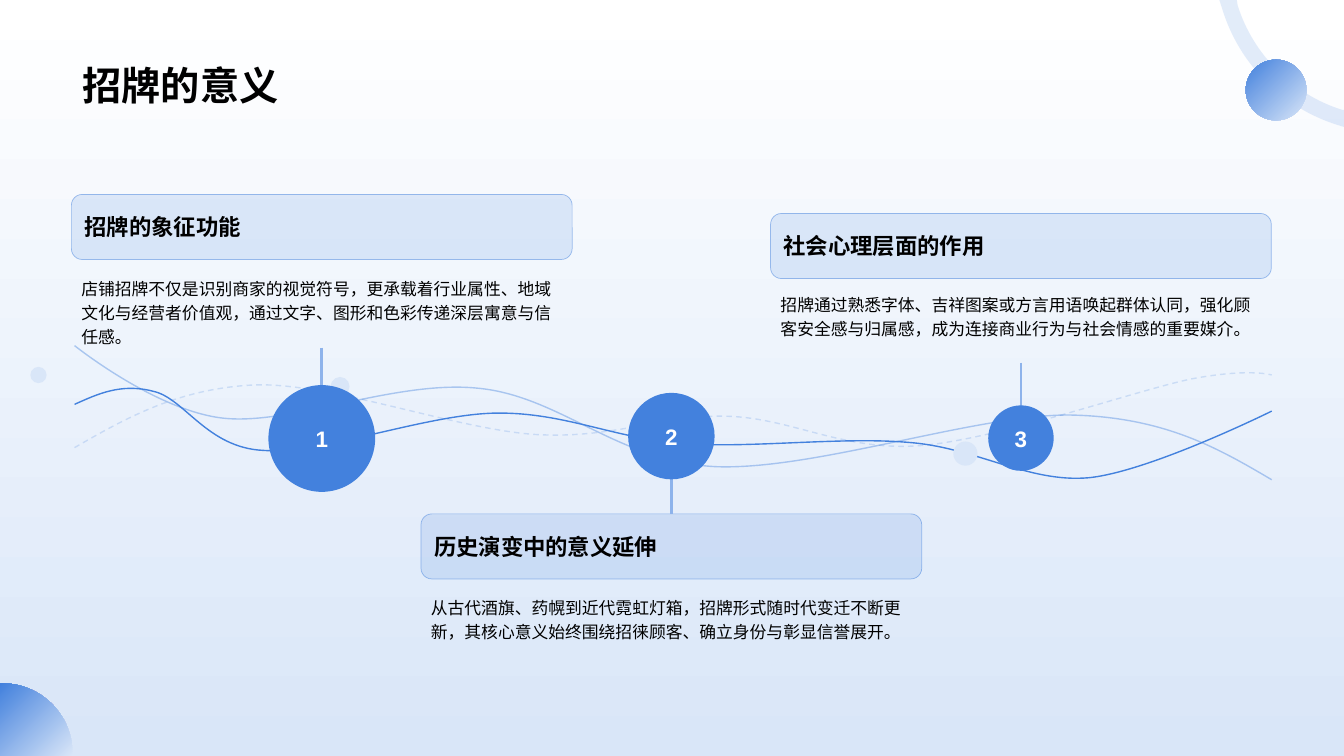
from pptx import Presentation
from pptx.dml.color import RGBColor
from pptx.enum import dml, shapes, text
from pptx.oxml.ns import qn
from pptx.util import Cm, Pt
from lxml import etree
from dataclasses import dataclass

TITLE = "招牌的意义"
CARDS = [
    dict(head="招牌的象征功能", top=4.9, body=6.79, tall=2.34, size=2.69, axis=11.05,
         stem=(8.76, 9.96),
         note="店铺招牌不仅是识别商家的视觉符号，更承载着行业属性、地域文化与经营者价值观，通过文字、图形和色彩传递深层寓意与信任感。"),
    dict(head="历史演变中的意义延伸", top=12.95, body=14.83, tall=2.21, size=2.18, axis=10.99,
         stem=(12.95, 11.48),
         note="从古代酒旗、药幌到近代霓虹灯箱，招牌形式随时代变迁不断更新，其核心意义始终围绕招徕顾客、确立身份与彰显信誉展开。"),
    dict(head="社会心理层面的作用", top=5.38, body=7.19, tall=2.11, size=1.65, axis=11.04,
         stem=(9.14, 10.54),
         note="招牌通过熟悉字体、吉祥图案或方言用语唤起群体认同，强化顾客安全感与归属感，成为连接商业行为与社会情感的重要媒介。"),
]
LEFT, STEP, WIDE, HIGH = 1.8, 8.81, 12.62, 1.64
DOTS = [(8.57, 9.74, 0.48), (24.33, 11.43, 0.61), (0.97, 9.45, 0.41)]
WAVES = [
    (20, True, [(1.88, 11.28), (3.2, 10.52, 4.52, 9.78, 6.45, 9.7),
                (8.38, 9.65, 11.51, 10.82, 13.49, 10.95),
                (15.47, 11.07, 16.71, 10.44, 18.34, 10.49),
                (19.96, 10.54, 21.26, 11.38, 23.19, 11.23),
                (25.15, 11.07, 28.55, 9.86, 30.02, 9.55),
                (31.5, 9.27, 32.05, 9.45, 32.05, 9.45), (32.05, 9.45)]),
    (100, False, [(1.88, 10.19), (2.46, 9.93, 3.05, 9.65, 3.86, 9.86),
                  (4.65, 10.03, 5.21, 11.28, 6.63, 11.35),
                  (8.08, 11.46, 10.72, 10.44, 12.5, 10.41),
                  (14.25, 10.39, 15.47, 11.05, 17.22, 11.18),
                  (18.95, 11.3, 21.21, 11, 22.91, 11.15),
                  (24.61, 11.28, 25.91, 12.17, 27.43, 12.04),
                  (28.96, 11.89, 32.05, 10.36, 32.05, 10.36), (32.05, 10.36)]),
    (40, False, [(32.05, 12.09), (30.71, 11.3, 29.36, 10.52, 27.03, 10.46),
                 (24.69, 10.41, 20.55, 11.86, 18.03, 11.76),
                 (15.54, 11.63, 14.1, 9.96, 12.01, 9.78),
                 (9.96, 9.58, 7.32, 10.72, 5.64, 10.54),
                 (3.94, 10.36, 1.88, 8.71, 1.88, 8.71)]),
]
CORNER = [(0.05, 17.22), (1.04, 17.22, 1.83, 18.01, 1.83, 19),
          (1.83, 19.05), (0, 19.05), (0, 17.22)]
RING = [(30.73, 0), (31.17, 0), (31.19, 0.13),
        (31.57, 1.37, 32.59, 2.39, 33.83, 2.77), (33.87, 2.77),
        (33.87, 3.2), (33.71, 3.15), (32.33, 2.72, 31.24, 1.63, 30.81, 0.25)]


@dataclass
class Theme:
    blue: str = "4381DD"
    pale: str = "D9E6F8"
    stem: str = "8EB3EB"
    white: str = "FFFFFF"
    black: str = "000000"
    font: str = "Arial"
    title: int = 28
    head: int = 16
    body: int = 12


theme = Theme()


def fade(parent, alpha):
    """Set the opacity of the solid colour inside an XML element."""
    color = parent.find(qn("a:solidFill"))[0]
    etree.SubElement(color, qn("a:alpha"), val=str(alpha * 1000))


def blend(fill, start, end, angle):
    """Give a fill a two-colour linear gradient."""
    fill.gradient()
    fill.gradient_angle = angle
    for stop, color in zip(fill.gradient_stops, (start, end)):
        stop.color.rgb = RGBColor.from_string(color)


def paint(shape, color, alpha=100):
    """Fill a shape with one colour."""
    shape.fill.solid()
    shape.fill.fore_color.rgb = RGBColor.from_string(color)
    if alpha < 100:
        fade(shape._element.spPr, alpha)


def stroke(shape, width, color=theme.blue, alpha=100):
    """Give a shape or connector a coloured line."""
    shape.line.width = Pt(width)
    shape.line.color.rgb = RGBColor.from_string(color)
    if alpha < 100:
        fade(shape._element.spPr.find(qn("a:ln")), alpha)


def draw(slide, steps, close):
    """Draw an outline made of points and cubic curves."""
    ends = [(Cm(step[-2]), Cm(step[-1])) for step in steps]
    pen = slide.shapes.build_freeform(*ends[0])
    pen.add_line_segments(ends[1:], close=close)
    shape = pen.convert_to_shape()
    shape.shadow.inherit = False
    for step, leg in zip(steps[1:], list(shape._element.iter(qn("a:lnTo")))):
        if len(step) == 6:
            curve = etree.Element(qn("a:cubicBezTo"))
            for x, y in zip(step[::2], step[1::2]):
                etree.SubElement(curve, qn("a:pt"), x=str(Cm(x) - shape.left),
                                 y=str(Cm(y) - shape.top))
            leg.getparent().replace(leg, curve)
    return shape


def form(slide, kind, x, y, w, h):
    """Add a preset shape without shadow or outline."""
    shape = slide.shapes.add_shape(kind, Cm(x), Cm(y), Cm(w), Cm(h))
    shape.shadow.inherit = False
    shape.line.fill.background()
    return shape


def disc(slide, x, y, size):
    """Add a circle around a centre."""
    return form(slide, shapes.MSO_SHAPE.OVAL, x - size / 2, y - size / 2, size, size)


def write(shape, words, size, color, bold=True, align=text.PP_ALIGN.LEFT,
          anchor=text.MSO_ANCHOR.MIDDLE):
    """Put one formatted paragraph in a shape."""
    frame = shape.text_frame
    frame.word_wrap = True
    frame.auto_size = text.MSO_AUTO_SIZE.NONE
    frame.vertical_anchor = anchor
    para = frame.paragraphs[0]
    para.text = words
    para.alignment = align
    font = para.font
    font.name, font.size, font.bold = theme.font, Pt(size), bold
    font.color.rgb = RGBColor.from_string(color)
    return para


def scene(slide):
    """Draw the background, corner shapes and waves."""
    blend(slide.background.fill, theme.pale, theme.white, 90)
    corner = draw(slide, CORNER, True)
    ring = draw(slide, RING, True)
    paint(ring, theme.blue, 15)
    ball = disc(slide, 32.16, 2.27, 1.53)
    for shape in (corner, ball):
        blend(shape.fill, theme.pale, theme.blue, 135)
    for shape in (corner, ring):
        shape.line.fill.background()
    for alpha, dash, steps in WAVES:
        wave = draw(slide, steps, False)
        wave.fill.background()
        stroke(wave, 1, alpha=alpha)
        if dash:
            wave.line.dash_style = dml.MSO_LINE.DASH
    for x, y, size in DOTS:
        paint(disc(slide, x, y, size), theme.pale)


def card(slide, index, item):
    """Add one heading, its note, its stem and its numbered circle."""
    x = LEFT + index * STEP
    mid = x + WIDE / 2
    box = form(slide, shapes.MSO_SHAPE.ROUNDED_RECTANGLE, x, item["top"], WIDE, HIGH)
    paint(box, theme.blue, 15)
    stroke(box, 0.5, alpha=50)
    write(box, item["head"], theme.head, theme.black)
    note = slide.shapes.add_textbox(Cm(x), Cm(item["body"]), Cm(WIDE), Cm(item["tall"]))
    para = write(note, item["note"], theme.body, theme.black, False,
                 anchor=text.MSO_ANCHOR.TOP)
    para.line_spacing = 1.2
    start, end = item["stem"]
    stem = slide.shapes.add_connector(shapes.MSO_CONNECTOR.STRAIGHT,
                                      Cm(mid), Cm(start), Cm(mid), Cm(end))
    stroke(stem, 2, theme.stem)
    etree.SubElement(stem._element.spPr, qn("a:effectLst"))
    if start == item["top"]:
        stem.begin_connect(box, 0)
    mark = disc(slide, mid, item["axis"], item["size"])
    paint(mark, theme.blue)
    write(mark, str(index + 1), theme.head, theme.white, align=text.PP_ALIGN.CENTER)


def main():
    """Build and save the slide."""
    deck = Presentation()
    deck.slide_width, deck.slide_height = Cm(33.87), Cm(19.05)
    slide = deck.slides.add_slide(deck.slide_layouts[5])
    title = slide.shapes.title
    title.left, title.top, title.width, title.height = Cm(1.83), Cm(0.36), Cm(30.18), Cm(2.49)
    write(title, TITLE, theme.title, theme.black, anchor=text.MSO_ANCHOR.BOTTOM)
    scene(slide)
    for index, item in enumerate(CARDS):
        card(slide, index, item)
    deck.save("out.pptx")


if __name__ == "__main__":
    main()
